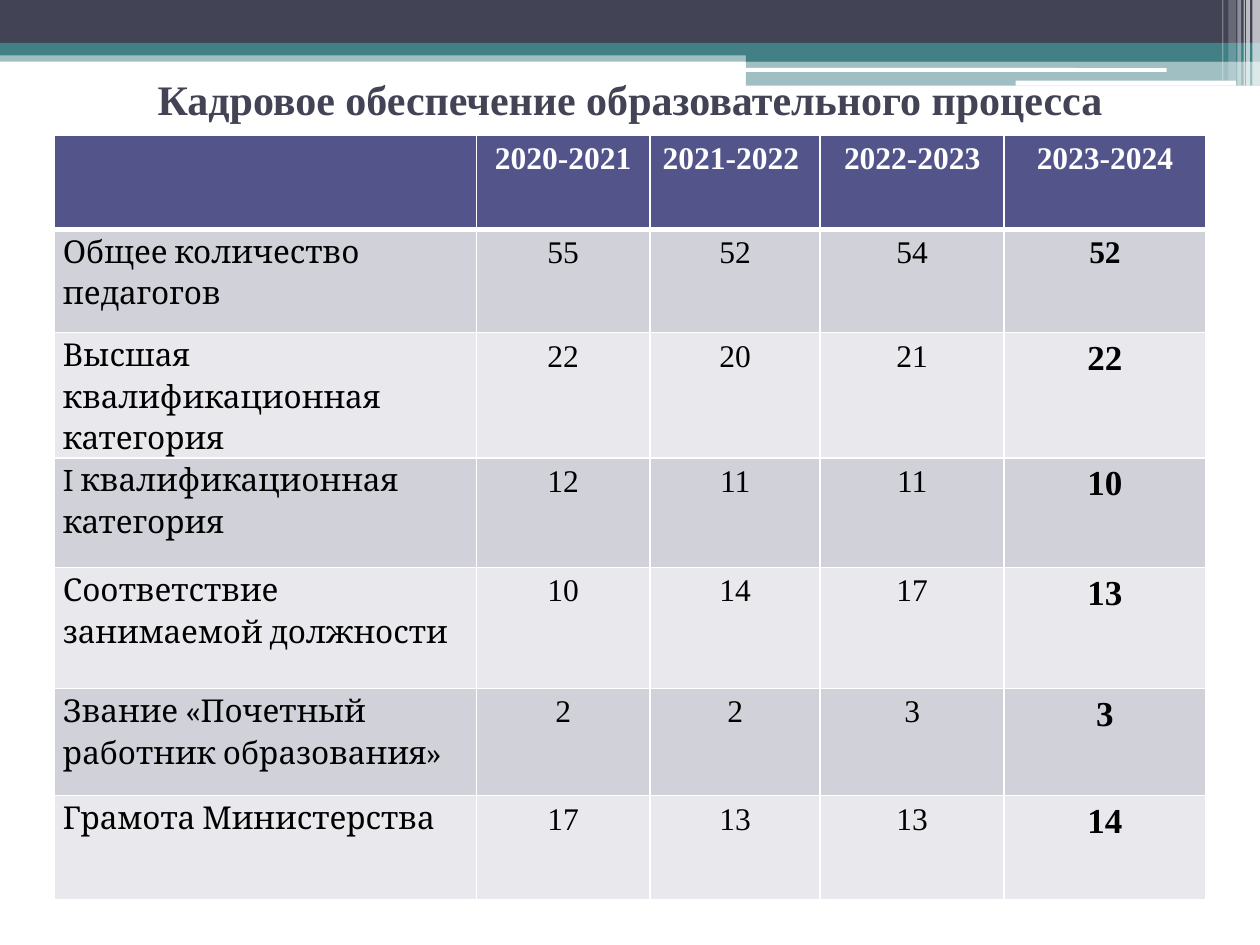
from collections import namedtuple

from lxml.etree import SubElement
from pptx import Presentation
from pptx.dml.color import RGBColor
from pptx.enum.shapes import MSO_SHAPE as Shape
from pptx.enum.text import MSO_ANCHOR as Anchor, PP_ALIGN as Align
from pptx.oxml import parse_xml
from pptx.oxml.ns import nsdecls, qn
from pptx.util import Inches, Pt

# The slide is a grid of 1000 columns by 750 rows
COLUMNS, ROWS = 1000, 750
CELL = Inches(10) // COLUMNS
Box = namedtuple("Box", "left top width height")

SLATE, TEAL, WHITE, BLACK = "424456", "438086", "FFFFFF", "000000"
HEADER_FILL, ROW_FILLS = "53548A", ("D1D1DA", "E9E9ED")
SERIF, LABEL_FONT = "Times New Roman", "Cambria"

YEARS = ["2020-2021", "2021-2022", "2022-2023", "2023-2024"]
STAFF = [
    ("Общее количество педагогов", 55, 52, 54, 52),
    ("Высшая квалификационная категория", 22, 20, 21, 22),
    ("I квалификационная категория", 12, 11, 11, 10),
    ("Соответствие занимаемой должности", 10, 14, 17, 13),
    ("Звание «Почетный работник образования»", 2, 2, 3, 3),
    ("Грамота Министерства", 17, 13, 13, 14),
]
COLUMN_WIDTHS = [335, 138, 135, 146, 160]
ROW_HEIGHTS = [75, 82, 90, 87, 96, 85, 83]


def color(value):
    return RGBColor.from_string(value)


def emu(box):
    return [CELL * length for length in box]


def add_run(para, text, size, font, tint, bold=False):
    span = para.add_run()
    span.text = text
    span.font.size, span.font.name, span.font.bold = Pt(size), font, bold
    span.font.color.rgb = color(tint)


def add_bar(page, box, fill, opacity=100, kind=Shape.RECTANGLE):
    bar = page.shapes.add_shape(kind, *emu(box))
    bar.shadow.inherit = False
    bar.fill.solid()
    bar.fill.fore_color.rgb = color(fill)
    bar.line.fill.background()
    if opacity < 100:
        tint = bar.fill._xPr.find(".//" + qn("a:srgbClr"))
        SubElement(tint, qn("a:alpha"), val=str(opacity * 1000))


def add_banner(page, box):
    left, top, width, height = box
    right, split = left + width, left + 592

    # Full-width bands, then the deeper right-hand ones
    add_bar(page, Box(left, top + 40, width, 9), TEAL, 50)
    add_bar(page, Box(left, top, width, 34), SLATE)
    add_bar(page, Box(left, top + 34, width, 10), TEAL)
    add_bar(page, Box(split, top + 39, right - split, 10), TEAL)
    add_bar(page, Box(split, top + 48, right - split, 20), TEAL, 50)

    # White rules
    add_bar(page, Box(split - 1, top + 54, 335, 3), WHITE, kind=Shape.ROUNDED_RECTANGLE)
    add_bar(page, Box(right - 194, top + 64, 175, 4), WHITE, kind=Shape.ROUNDED_RECTANGLE)

    # Fading stripes: distance from the right edge, width, height, opacity
    for offset, thickness, depth, opacity in [
        (6, 6, height, 65), (11, 3, height, 65), (13, 1, height, 60),
        (18, 3, height, 40), (25, 6, height - 4, 20), (30, 1, height - 4, 30),
    ]:
        add_bar(page, Box(right - offset, top, thickness, depth), WHITE, opacity)


def add_title(page, box, text):
    title = page.shapes.title
    title.left, title.top, title.width, title.height = emu(box)
    frame = title.text_frame
    frame.vertical_anchor = Anchor.MIDDLE
    para = frame.paragraphs[0]
    para.alignment = Align.CENTER
    add_run(para, text, 24, SERIF, SLATE, True)
    title.element.getparent().append(title.element)  # in front of the banner


def style_cell(cell, fill, bottom=1):
    cell.fill.solid()
    cell.fill.fore_color.rgb = color(fill)
    properties = cell._tc.get_or_add_tcPr()
    for place, side in enumerate("LRTB"):
        weight = Pt(bottom if side == "B" else 1)
        properties.insert(place, parse_xml(
            f'<a:ln{side} {nsdecls("a")} w="{weight}"><a:solidFill>'
            f'<a:srgbClr val="{WHITE}"/></a:solidFill></a:ln{side}>'))


def fill_header(cells):
    for cell, year in zip(cells, [""] + YEARS):
        style_cell(cell, HEADER_FILL, bottom=3)
        if year:
            para = cell.text_frame.paragraphs[0]
            para.alignment = Align.LEFT if year == YEARS[1] else Align.CENTER
            add_run(para, year, 18, SERIF, WHITE, True)


def fill_row(cells, label, values, fill, last_size):
    for cell in cells:
        style_cell(cell, fill)
    name_cell, *value_cells = cells
    name_cell.margin_left = name_cell.margin_right = CELL * 7
    name_cell.margin_top = name_cell.margin_bottom = 0
    para = name_cell.text_frame.paragraphs[0]
    para.line_spacing = 1.15
    add_run(para, label, 18, LABEL_FONT, BLACK)

    for cell, value, year in zip(value_cells, values, YEARS):
        latest = year == YEARS[-1]
        para = cell.text_frame.paragraphs[0]
        para.alignment = Align.CENTER
        add_run(para, str(value), last_size if latest else 18, SERIF, BLACK, latest)


def add_staff_table(page, box):
    table = page.shapes.add_table(len(ROW_HEIGHTS), len(COLUMN_WIDTHS), *emu(box)).table
    for column, width in zip(table.columns, COLUMN_WIDTHS):
        column.width = CELL * width
    for row, height in zip(table.rows, ROW_HEIGHTS):
        row.height = CELL * height

    header, *body = [list(row.cells) for row in table.rows]
    fill_header(header)
    for index, (cells, (label, *values)) in enumerate(zip(body, STAFF)):
        fill_row(cells, label, values, ROW_FILLS[index % 2], 20 if index else 18)


def main():
    deck = Presentation()
    deck.slide_width, deck.slide_height = CELL * COLUMNS, CELL * ROWS
    page = deck.slides.add_slide(deck.slide_layouts[5])
    add_banner(page, Box(0, 0, COLUMNS, 68))
    add_title(page, Box(50, 39, 900, 78), "Кадровое обеспечение образовательного процесса")
    add_staff_table(page, Box(43, 107, sum(COLUMN_WIDTHS), sum(ROW_HEIGHTS)))
    deck.save("out.pptx")


if __name__ == "__main__":
    main()
